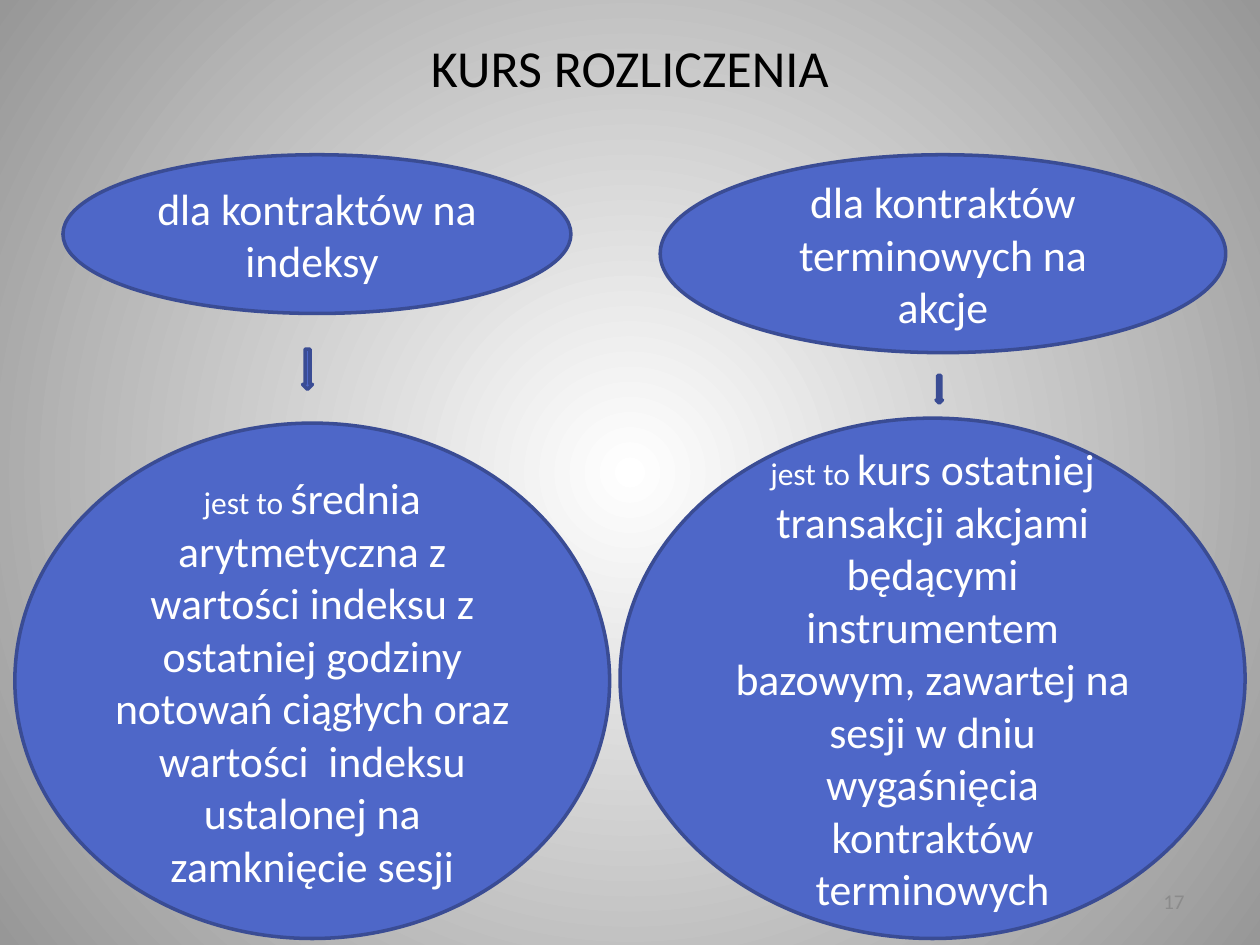
from lxml import etree
from pptx import Presentation
from pptx import util as u
from pptx.dml.color import RGBColor
from pptx.enum import shapes, text
from pptx.oxml import ns

WHITE = RGBColor(0xFF, 0xFF, 0xFF)
BLACK = RGBColor(0, 0, 0)
GREY = RGBColor(0x97, 0x97, 0x97)
NUMBER_GREY = RGBColor(0x8B, 0x8B, 0x8B)
BLUE = RGBColor(0x4E, 0x67, 0xC8)
NAVY = RGBColor(0x3A, 0x4C, 0x94)


class Deck:
    font = "Calibri"
    line_width = u.Pt(2)

    def __init__(self, prs):
        self.s = prs.slides.add_slide(prs.slide_layouts[6])

    def background(self, inner, outer):
        fill = self.s.background.fill
        fill.gradient()
        for stop, color in zip(fill.gradient_stops, (inner, outer)):
            stop.color.rgb = color
        grad = self.s.element.find(".//" + ns.qn("a:gradFill"))
        grad.remove(grad.find(ns.qn("a:lin")))
        circle = etree.SubElement(grad, ns.qn("a:path"), {"path": "circle"})
        etree.SubElement(circle, ns.qn("a:fillToRect"),
                         dict.fromkeys("ltrb", "50000"))

    def add_text(self, sp, runs, color, align):
        tf = sp.text_frame
        tf.word_wrap = True
        tf.vertical_anchor = text.MSO_ANCHOR.MIDDLE
        p = tf.paragraphs[0]
        p.alignment = align
        for words, size in runs:
            r = p.add_run()
            r.text = words
            r.font.name = self.font
            r.font.size = u.Pt(size)
            r.font.color.rgb = color

    def label(self, box, words, size, color, align=text.PP_ALIGN.CENTER):
        sp = self.s.shapes.add_textbox(*map(u.Cm, box))
        self.add_text(sp, [(words, size)], color, align)

    def shape(self, kind, box):
        sp = self.s.shapes.add_shape(kind, *map(u.Cm, box))
        sp.shadow.inherit = False
        sp.fill.solid()
        sp.fill.fore_color.rgb = BLUE
        sp.line.color.rgb = NAVY
        sp.line.width = self.line_width
        return sp

    def ellipse(self, box, *runs):
        sp = self.shape(shapes.MSO_SHAPE.OVAL, box)
        self.add_text(sp, runs, WHITE, text.PP_ALIGN.CENTER)

    def arrow(self, box):
        self.shape(shapes.MSO_SHAPE.DOWN_ARROW, box)


def main():
    prs = Presentation()
    prs.slide_width, prs.slide_height = u.Cm(25.4), u.Cm(19.05)
    deck = Deck(prs)
    deck.background(WHITE, GREY)
    deck.label((1.27, 0.76, 22.86, 1.17), "KURS ROZLICZENIA", 29.7, BLACK)
    deck.label((18.2, 17.66, 5.93, 1.01), "17", 12, NUMBER_GREY,
               text.PP_ALIGN.RIGHT)

    intro = ("jest to ", 18)
    deck.ellipse((1.27, 3.12, 10.24, 3.2), ("dla kontraktów na indeksy ", 25))
    deck.ellipse((0.3, 8.53, 11.99, 10.39), intro,
                 ("średnia arytmetyczna z wartości indeksu z ostatniej godziny "
                  "notowań ciągłych oraz wartości  indeksu ustalonej na "
                  "zamknięcie sesji", 25))
    deck.arrow((6.1, 7.04, 0.2, 0.81))

    deck.ellipse((13.31, 3.12, 11.4, 3.99),
                 ("dla kontraktów terminowych na akcje", 25))
    deck.ellipse((12.5, 8.43, 12.6, 10.49), intro,
                 ("kurs ostatniej transakcji akcjami będącymi instrumentem "
                  "bazowym, zawartej na sesji w dniu wygaśnięcia kontraktów "
                  "terminowych", 25))
    deck.arrow((18.87, 7.57, 0.13, 0.56))
    prs.save("out.pptx")


if __name__ == "__main__":
    main()
